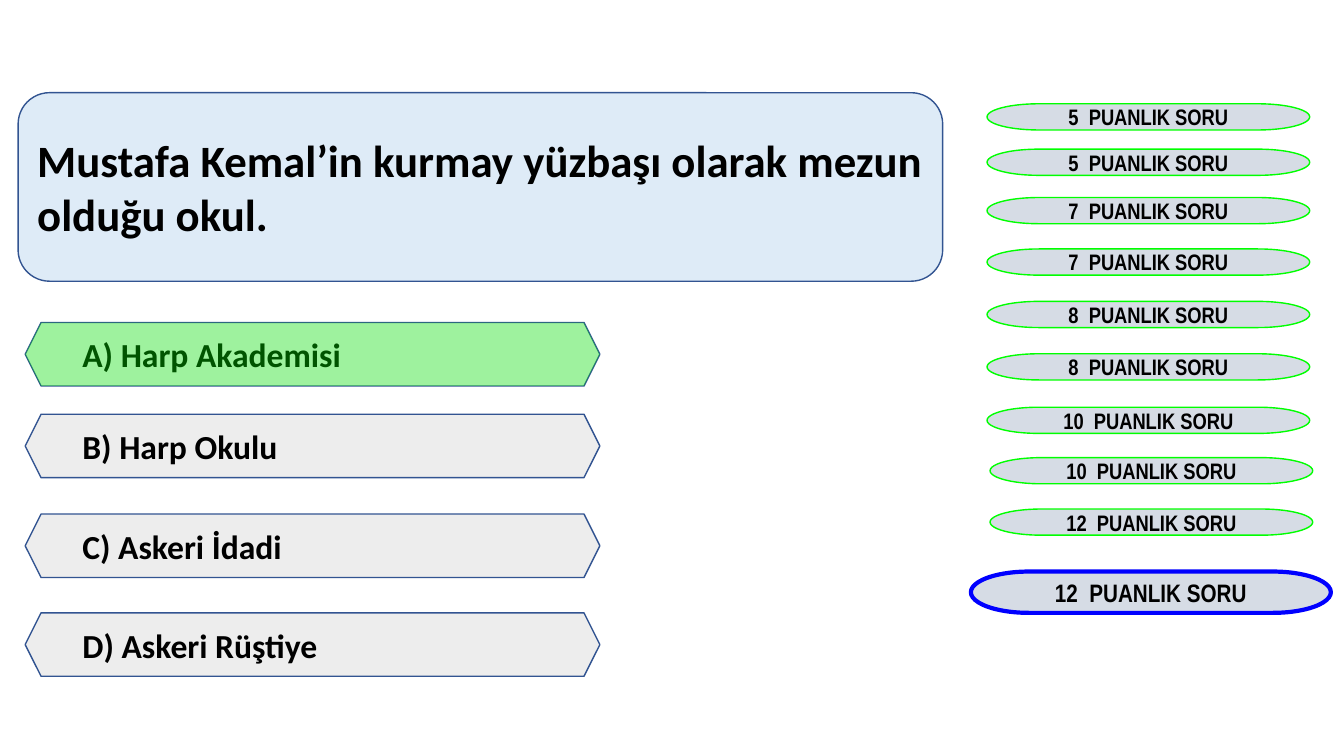
"""Build a quiz slide with a question, four answers and a ladder of points."""
from dataclasses import dataclass

from lxml import etree
from pptx import Presentation
from pptx import util as u
from pptx.dml import color
from pptx.enum import shapes, text
from pptx.oxml import ns

HUES = {"ink": "000000", "navy": "325491", "sky": "DEEBF7", "pale": "EDEDED",
        "steel": "D6DCE5", "lime": "00FF00", "blue": "0000FF"}
KIND = shapes.MSO_SHAPE
ALIGN = text.PP_ALIGN


@dataclass(frozen=True)
class Box:
    x: float
    y: float
    w: float
    h: float


@dataclass(frozen=True)
class Step:
    points: int
    box: Box
    edge: str = "lime"
    width: float = 1
    size: int = 16


def rgb(hue: str):
    return color.RGBColor.from_string(HUES[hue])


def draw(slide, kind, box: Box, fill: str, edge: str = "", width: float = 1):
    shape = slide.shapes.add_shape(
        kind, *(u.Inches(n) for n in (box.x, box.y, box.w, box.h)))
    shape.shadow.inherit = False
    shape.fill.solid()
    shape.fill.fore_color.rgb = rgb(fill)
    if edge:
        shape.line.color.rgb = rgb(edge)
        shape.line.width = u.Pt(width)
    else:
        shape.line.fill.background()
    return shape


def write(shape, words: str, *, size: int, font: str = "Calibri",
          align=ALIGN.LEFT, inset: float | None = None) -> None:
    frame = shape.text_frame
    frame.word_wrap = True
    frame.vertical_anchor = text.MSO_ANCHOR.MIDDLE
    if inset is not None:
        frame.margin_left = frame.margin_right = u.Inches(inset)
        frame.margin_top = frame.margin_bottom = u.Inches(inset)
    para = frame.paragraphs[0]
    para.alignment = align
    run = para.add_run()
    run.text = words
    run.font.name = font
    run.font.size = u.Pt(size)
    run.font.bold = True
    run.font.color.rgb = rgb("ink")


def fade(shape, share: int) -> None:
    tint = shape.fill._xPr.find(".//" + ns.qn("a:srgbClr"))
    etree.SubElement(tint, ns.qn("a:alpha"), val=str(share * 1000))


def ask(slide, words: str) -> None:
    card = draw(slide, KIND.ROUNDED_RECTANGLE, Box(0.18, 0.92, 9.17, 1.87),
                "sky", "navy")
    write(card, words, size=32)


def offer(slide, choices: dict[str, float], right: str) -> None:
    for words, top in choices.items():
        cell = draw(slide, KIND.HEXAGON, Box(0.25, top, 5.7, 0.63),
                    "pale", "navy")
        write(cell, words, size=24, inset=0.04)
    glow = draw(slide, KIND.HEXAGON, Box(0.25, choices[right], 5.7, 0.63),
                "lime")
    fade(glow, 33)


def climb(slide, steps: list[Step]) -> None:
    for step in steps:
        pill = draw(slide, KIND.FLOWCHART_TERMINATOR, step.box, "steel",
                    step.edge, step.width)
        write(pill, f"{step.points}  PUANLIK SORU", size=step.size,
              font="Arial Narrow", align=ALIGN.CENTER)


def main() -> None:
    deck = Presentation()
    deck.slide_width = u.Inches(13.33)
    deck.slide_height = u.Inches(7.5)
    slide = deck.slides.add_slide(deck.slide_layouts[6])

    ask(slide, "Mustafa Kemal’in kurmay yüzbaşı olarak mezun olduğu okul.")
    offer(slide, {"A) Harp Akademisi": 3.2, "B) Harp Okulu": 4.11,
                  "C) Askeri İdadi": 5.1, "D) Askeri Rüştiye": 6.08},
          right="A) Harp Akademisi")

    points = (5, 5, 7, 7, 8, 8, 10, 10, 12)
    tops = (1.03, 1.48, 1.96, 2.47, 2.99, 3.51, 4.04, 4.54, 5.05)
    lefts = [9.79] * 7 + [9.82] * 2
    steps = [Step(n, Box(x, y, 3.2, 0.26))
             for n, x, y in zip(points, lefts, tops)]
    last = Step(12, Box(9.63, 5.67, 3.57, 0.41), "blue", 3, 18)
    climb(slide, [*steps, last])

    deck.save("out.pptx")


if __name__ == "__main__":
    main()
